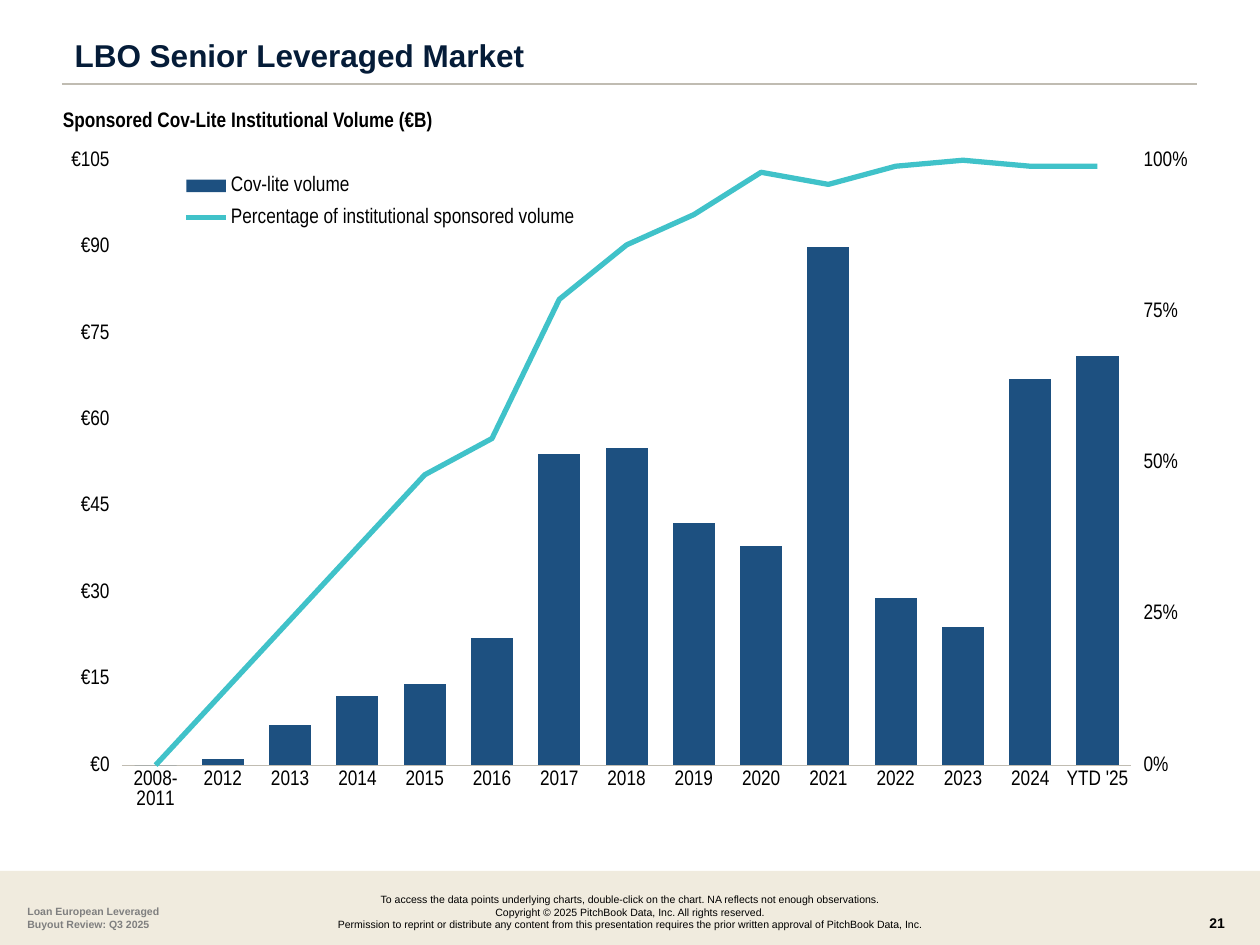
import pptx
import pptx.chart.data
import pptx.dml.color
import pptx.enum.chart
import pptx.enum.shapes
import pptx.enum.text
import pptx.oxml
import pptx.oxml.ns
import pptx.util

COLORS = {"navy": "051C38", "bar": "1D5080", "line": "40C2C9", "rule": "C0BCB2",
          "band": "F0EBDE", "gray": "7F7F7F", "black": "000000", "white": "FFFFFF"}
TITLE = "LBO Senior Leveraged Market"
CATEGORIES = ["2008-2011"] + [str(y) for y in range(2012, 2025)] + ["YTD '25"]
VOLUME = ("Cov-lite volume", "[$€-83C]#,##0",
          [0, 1, 7, 12, 14, 22, 54, 55, 42, 38, 90, 29, 24, 67, 71])
SHARE = ("Percentage of institutional sponsored volume", "0%",
         [0, .12, .24, .36, .48, .54, .77, .86, .91, .98, .96, .99, 1, .99, .99])
CENTER = pptx.enum.text.PP_ALIGN.CENTER
LEFT = pptx.enum.text.PP_ALIGN.LEFT
MIDDLE = pptx.enum.text.MSO_ANCHOR.MIDDLE
TOP = pptx.enum.text.MSO_ANCHOR.TOP
# box in px, lines, font, size, bold, colour, alignment
TEXTS = {
    "page": ((1197, 908, 53, 32), ["21"], "Arial", 8, True, "black", LEFT),
    "notice": ((106, 887, 1048, 50), [
        "To access the data points underlying charts, double-click on the chart. "
        "NA reflects not enough observations.",
        "Copyright © 2025 PitchBook Data, Inc. All rights reserved.",
        "Permission to reprint or distribute any content from this presentation "
        "requires the prior written approval of PitchBook Data, Inc."],
        "Arial", 6, False, "black", CENTER),
    "report": ((15, 899, 194, 38), ["Loan European Leveraged Buyout Review: Q3 2025"],
               "Arial", 6, True, "gray", LEFT),
    "subtitle": ((63, 97, 718, 39), ["Sponsored Cov-Lite Institutional Volume (€B)"],
                 "Arial Narrow", 12, True, "black", LEFT),
}
CHART_BOX = (63, 136, 1134, 693)
PLOT_LAYOUT = (0.052, 0.035, 0.89, 0.873)
LEGEND_LAYOUT = (0.1, 0.04, 0.36, 0.11)
NS = pptx.oxml.ns.nsdecls("c", "a")


def px(n):
    return round(n * 914400 / 126)


def rgb(name):
    return pptx.dml.color.RGBColor.from_string(COLORS[name])


def set_attrs(obj, **values):
    for name, value in values.items():
        setattr(obj, name, value)


def set_font(font, name, size, bold, color):
    set_attrs(font, name=name, size=pptx.util.Pt(size), bold=bold)
    font.color.rgb = rgb(color)


def write(shape, lines, name, size, bold, color, align):
    tf = shape.text_frame
    tf.word_wrap = True
    for i, line in enumerate(lines):
        p = tf.add_paragraph() if i else tf.paragraphs[0]
        p.alignment = align
        r = p.add_run()
        r.text = line
        set_font(r.font, name, size, bold, color)
    return tf


def layout_xml(box, inner=False):
    target = '<c:layoutTarget val="inner"/>' if inner else ""
    modes = "".join(f'<c:{k}Mode val="edge"/>' for k in "xy")
    sizes = "".join(f'<c:{k} val="{v}"/>' for k, v in zip("xywh", box))
    return pptx.oxml.parse_xml(f"<c:layout {NS}><c:manualLayout>{target}{modes}{sizes}"
                               "</c:manualLayout></c:layout>")


def move_to_right_axis(chart, number_format):
    """Turn the second column series into a line on its own right-hand axis."""
    bar = chart.plots[0]._element
    ser = chart.plots[0].series[1]._element
    for el in ser.xpath("c:invertIfNegative"):
        ser.remove(el)
    line = pptx.oxml.parse_xml(
        f'<c:lineChart {NS}><c:grouping val="standard"/><c:varyColors val="0"/>'
        '<c:marker val="1"/><c:axId val="5001"/><c:axId val="5002"/></c:lineChart>')
    line.insert(2, ser)
    bar.addnext(line)
    axes = [
        f'<c:valAx {NS}><c:axId val="5002"/><c:scaling><c:orientation val="minMax"/>'
        '<c:max val="1"/><c:min val="0"/></c:scaling><c:delete val="0"/>'
        f'<c:axPos val="r"/><c:numFmt formatCode="{number_format}" sourceLinked="0"/>'
        '<c:majorTickMark val="out"/><c:minorTickMark val="none"/>'
        '<c:tickLblPos val="nextTo"/><c:spPr><a:ln><a:noFill/></a:ln></c:spPr>'
        '<c:crossAx val="5001"/><c:crosses val="max"/>'
        '<c:crossBetween val="between"/><c:majorUnit val="0.25"/></c:valAx>',
        f'<c:catAx {NS}><c:axId val="5001"/><c:scaling><c:orientation val="minMax"/>'
        '</c:scaling><c:delete val="1"/><c:axPos val="b"/>'
        '<c:crossAx val="5002"/><c:crosses val="autoZero"/></c:catAx>']
    for xml in axes:
        chart.value_axis._element.addnext(pptx.oxml.parse_xml(xml))


def add_volume_chart(s):
    data = pptx.chart.data.CategoryChartData()
    data.categories = CATEGORIES
    for name, number_format, values in (VOLUME, SHARE):
        data.add_series(name, values, number_format)
    chart = s.shapes.add_chart(pptx.enum.chart.XL_CHART_TYPE.COLUMN_STACKED,
                               *map(px, CHART_BOX), data).chart
    chart.has_title = False
    set_font(chart.font, "Arial Narrow", 12, False, "black")
    marks = pptx.enum.chart.XL_TICK_MARK
    cat, val = chart.category_axis, chart.value_axis
    cat.major_tick_mark = marks.NONE
    cat.format.line.color.rgb = rgb("rule")
    cat.format.line.width = pptx.util.Pt(0.25)
    set_attrs(val, minimum_scale=0, maximum_scale=105, major_unit=15,
              has_major_gridlines=False, major_tick_mark=marks.OUTSIDE)
    set_attrs(val.tick_labels, number_format=VOLUME[1], number_format_is_linked=False)
    val.format.line.fill.background()

    move_to_right_axis(chart, SHARE[1])
    columns, lines = chart.plots
    set_attrs(columns, gap_width=60, overlap=100, vary_by_categories=False)
    fill = columns.series[0].format.fill
    fill.solid()
    fill.fore_color.rgb = rgb("bar")
    share = lines.series[0]
    share.smooth = False
    share.marker.style = pptx.enum.chart.XL_MARKER_STYLE.NONE
    share.format.line.color.rgb = rgb("line")
    share.format.line.width = pptx.util.Pt(3)

    plot_area = columns._element.getparent()
    for el in plot_area.xpath("c:layout"):
        plot_area.remove(el)
    plot_area.insert(0, layout_xml(PLOT_LAYOUT, inner=True))
    chart.has_legend = True
    legend = chart.legend
    set_attrs(legend, position=pptx.enum.chart.XL_LEGEND_POSITION.CORNER,
              include_in_layout=False)
    for el in legend._element.xpath("c:layout"):
        legend._element.remove(el)
    legend._element.xpath("c:legendPos")[0].addnext(layout_xml(LEGEND_LAYOUT))


def main():
    prs = pptx.Presentation()
    set_attrs(prs, slide_width=px(1260), slide_height=px(945))
    s = prs.slides.add_slide(prs.slide_layouts[5])

    band = s.shapes.add_shape(pptx.enum.shapes.MSO_SHAPE.RECTANGLE,
                              *map(px, (0, 871, 1260, 74)))
    band.shadow.inherit = False
    band.fill.solid()
    band.fill.fore_color.rgb = rgb("band")
    band.line.fill.background()

    rule = s.shapes.add_connector(pptx.enum.shapes.MSO_CONNECTOR.STRAIGHT,
                                  *map(px, (62, 84, 1197, 84)))
    rule.line.color.rgb = rgb("rule")
    rule.line.width = pptx.util.Pt(0.75)
    rule._element.spPr.append(pptx.oxml.parse_xml(f"<a:effectLst {NS}/>"))

    title = s.shapes.title
    set_attrs(title, left=px(62), top=px(34), width=px(968), height=px(39))
    tf = write(title, [TITLE], "Arial", 18, True, "navy", LEFT)
    tf.vertical_anchor = TOP
    tf.paragraphs[0].line_spacing = 0.9

    frames = {}
    for name, (box, *text) in TEXTS.items():
        frames[name] = write(s.shapes.add_textbox(*map(px, box)), *text)
    set_attrs(frames["subtitle"], margin_left=0, vertical_anchor=MIDDLE)
    frames["subtitle"].paragraphs[0].line_spacing = 1.2

    add_volume_chart(s)
    prs.save("out.pptx")


if __name__ == "__main__":
    main()
